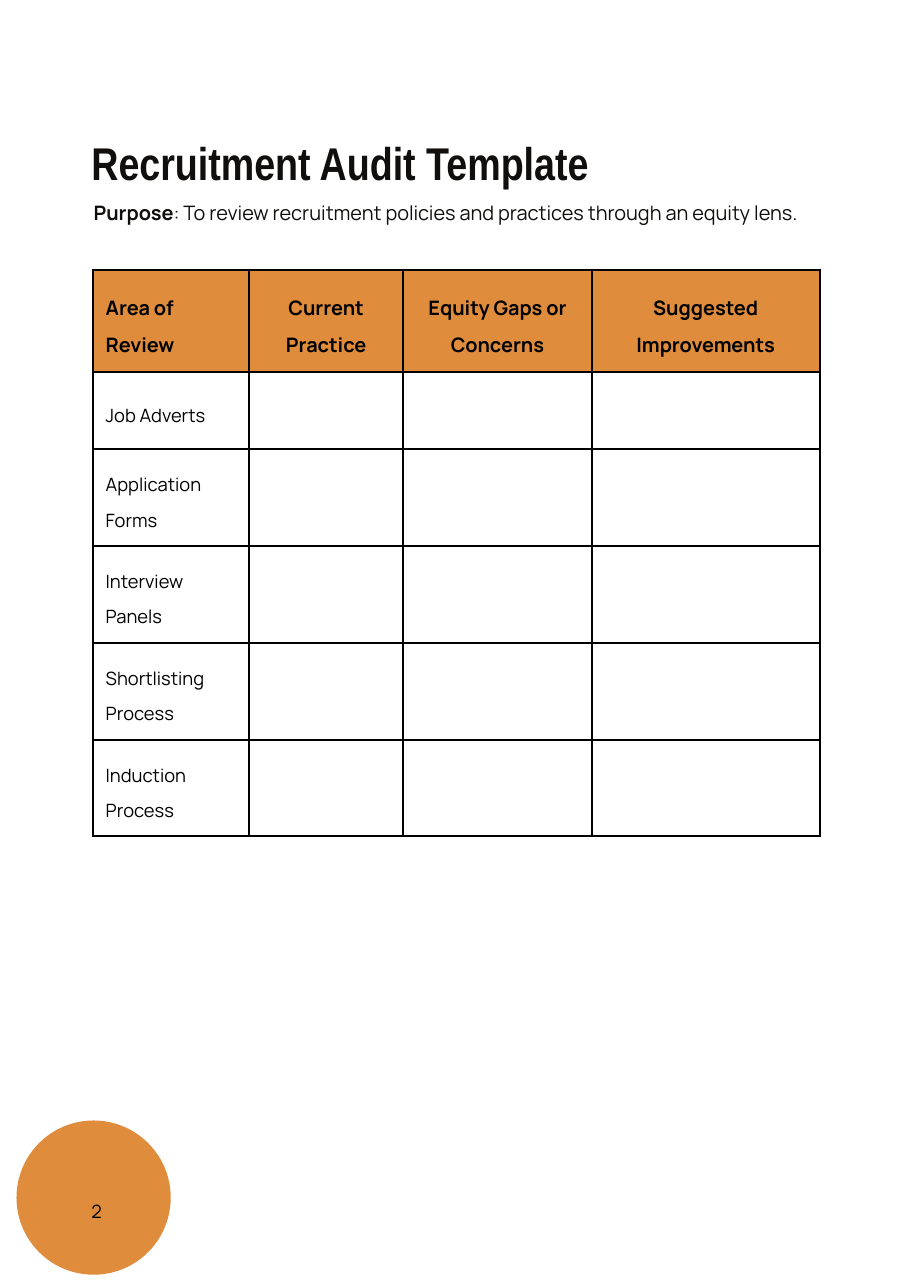
from lxml import etree
from pptx import Presentation
from pptx.dml.color import RGBColor
from pptx.enum.shapes import MSO_SHAPE
from pptx.enum.text import MSO_ANCHOR, MSO_AUTO_SIZE, PP_ALIGN
from pptx.oxml.ns import qn
from pptx.util import Inches, Pt

OVAL = MSO_SHAPE.OVAL
TOP, MIDDLE = MSO_ANCHOR.TOP, MSO_ANCHOR.MIDDLE
LEFT, CENTER = PP_ALIGN.LEFT, PP_ALIGN.CENTER
FIXED = MSO_AUTO_SIZE.NONE

COLORS = {"ink": "100F0D", "black": "000000", "orange": "DF8C3D"}
HEAD, BODY = "Arial Narrow", "Manrope"
WIDE, HIGH = 8.26, 11.69
COLS = [1.42, 1.4, 1.71, 2.07]
ROWS = [0.83, 0.7] + [0.78] * 4
TITLES = ["Area of Review", "Current Practice", "Equity Gaps or Concerns",
          "Suggested Improvements"]
AREAS = ["Job Adverts", "Application Forms", "Interview Panels",
         "Shortlisting Process", "Induction Process"]


def color(name):
    """Return the named colour."""
    return RGBColor.from_string(COLORS[name])


def style(par, size, ink, bold=False, face=BODY, space=1.4, align=LEFT):
    """Format a whole paragraph."""
    par.alignment, par.line_spacing = align, space
    font = par.font
    font.name, font.size, font.bold = face, Pt(size), bold
    font.color.rgb = color(ink)


def prepare(shape, box):
    """Place a text shape in its box without insets and return its frame."""
    shape.left, shape.top, shape.width, shape.height = map(Inches, box)
    frame = shape.text_frame
    frame.margin_left = frame.margin_right = 0
    frame.margin_top = frame.margin_bottom = 0
    frame.auto_size, frame.word_wrap = FIXED, True
    frame.vertical_anchor = TOP
    return frame


def add_text(slide, box):
    """Add an empty text box and return its frame."""
    return prepare(slide.shapes.add_textbox(0, 0, 0, 0), box)


def add_intro(slide, box):
    """Set the title with the purpose line below it."""
    x, y, w, h = box
    frame = prepare(slide.shapes.title, (x, y, w, 0.45))
    frame.text = "Recruitment Audit Template"
    style(frame.paragraphs[0], 30, "ink", True, HEAD, 1.0)
    par = add_text(slide, (x + 0.02, y + h - 0.28, w, 0.28)).paragraphs[0]
    label = par.add_run()
    label.text = "Purpose"
    label.font.bold = True
    par.add_run().text = ": To review recruitment policies and practices through an equity lens."
    style(par, 13, "ink")


def add_borders(cell):
    """Draw black lines on all four sides of a cell."""
    props = cell._tc.get_or_add_tcPr()
    for spot, side in enumerate(("lnL", "lnR", "lnT", "lnB")):
        line = etree.Element(qn("a:" + side), w=str(Pt(1.5)))
        fill = etree.SubElement(line, qn("a:solidFill"))
        etree.SubElement(fill, qn("a:srgbClr"), val=COLORS["black"])
        props.insert(spot, line)


def add_audit(slide, x, y):
    """Build the audit table from its top left corner."""
    size = (x, y, sum(COLS), sum(ROWS))
    table = slide.shapes.add_table(len(ROWS), len(COLS), *map(Inches, size)).table
    for col, width in zip(table.columns, COLS):
        col.width = Inches(width)
    data = [TITLES] + [[area, "", "", ""] for area in AREAS]
    for r, (row, texts) in enumerate(zip(table.rows, data)):
        row.height = Inches(ROWS[r])
        for c, (cell, text) in enumerate(zip(row.cells, texts)):
            cell.margin_left = cell.margin_right = Inches(0.12)
            cell.margin_top = cell.margin_bottom = Inches(0.12)
            cell.vertical_anchor = MIDDLE
            if r == 0:
                cell.fill.solid()
                cell.fill.fore_color.rgb = color("orange")
            else:
                cell.fill.background()
            cell.text = text
            style(cell.text_frame.paragraphs[0], 12 if r else 13, "black",
                  r == 0, align=CENTER if c else LEFT)
            add_borders(cell)


def add_folio(slide, x, y, size):
    """Draw the disc with the page number."""
    disc = slide.shapes.add_shape(OVAL, *map(Inches, (x, y, size, size)))
    disc.shadow.inherit = False
    disc.fill.solid()
    disc.fill.fore_color.rgb = color("orange")
    disc.line.fill.background()
    frame = add_text(slide, (x + 0.68, y + 0.64, size, 0.25))
    frame.text = "2"
    style(frame.paragraphs[0], 12, "black")


def main():
    """Build and save the page."""
    deck = Presentation()
    deck.slide_width, deck.slide_height = Inches(WIDE), Inches(HIGH)
    slide = deck.slides.add_slide(deck.slide_layouts[5])
    add_intro(slide, (0.83, 1.22, 6.42, 0.79))
    add_audit(slide, 0.84, 2.45)
    add_folio(slide, 0.15, 10.17, 1.4)
    deck.save("out.pptx")


if __name__ == "__main__":
    main()
